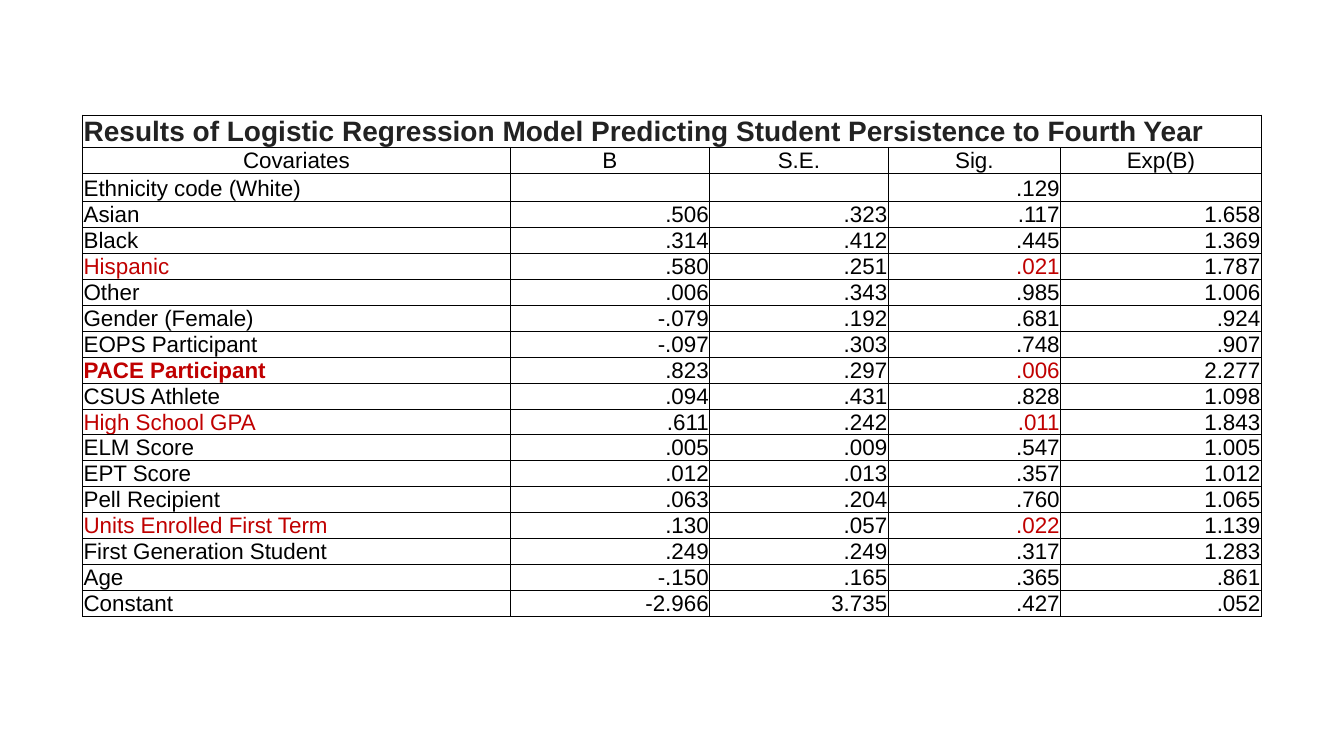
"""Build a slide with one table of logistic regression results."""
import lxml.etree
import pptx
import pptx.dml.color
import pptx.enum.text
import pptx.oxml.ns
import pptx.util

ALIGN = pptx.enum.text.PP_ALIGN
TITLE = "Results of Logistic Regression Model Predicting Student Persistence to Fourth Year"
HEADER = ["Covariates", "B", "S.E.", "Sig.", "Exp(B)"]
RESULTS = [
    ["Ethnicity code (White)", "", "", ".129", ""],
    ["Asian", ".506", ".323", ".117", "1.658"],
    ["Black", ".314", ".412", ".445", "1.369"],
    ["Hispanic", ".580", ".251", ".021", "1.787"],
    ["Other", ".006", ".343", ".985", "1.006"],
    ["Gender (Female)", "-.079", ".192", ".681", ".924"],
    ["EOPS Participant", "-.097", ".303", ".748", ".907"],
    ["PACE Participant", ".823", ".297", ".006", "2.277"],
    ["CSUS Athlete", ".094", ".431", ".828", "1.098"],
    ["High School GPA", ".611", ".242", ".011", "1.843"],
    ["ELM Score", ".005", ".009", ".547", "1.005"],
    ["EPT Score", ".012", ".013", ".357", "1.012"],
    ["Pell Recipient", ".063", ".204", ".760", "1.065"],
    ["Units Enrolled First Term", ".130", ".057", ".022", "1.139"],
    ["First Generation Student", ".249", ".249", ".317", "1.283"],
    ["Age", "-.150", ".165", ".365", ".861"],
    ["Constant", "-2.966", "3.735", ".427", ".052"],
]
COLUMN_SHARES = [31.81, 14.85, 13.28, 12.83, 14.93]
TITLE_ROW, BODY_ROW = 3.73, 3.2


def color(value):
    return pptx.dml.color.RGBColor.from_string(value)


def add_borders(cell):
    tcPr = cell._tc.get_or_add_tcPr()
    for side in ("lnL", "lnR", "lnT", "lnB"):
        ln = lxml.etree.SubElement(tcPr, pptx.oxml.ns.qn(f"a:{side}"), w="6350")
        fill = lxml.etree.SubElement(ln, pptx.oxml.ns.qn("a:solidFill"))
        lxml.etree.SubElement(fill, pptx.oxml.ns.qn("a:srgbClr"), val="000000")


prs = pptx.Presentation()
prs.slide_width, prs.slide_height = pptx.util.Inches(13.33), pptx.util.Inches(7.5)
W, H = prs.slide_width / 100, prs.slide_height / 100
s = prs.slides.add_slide(prs.slide_layouts[6])

rows = [[TITLE, "", "", "", ""], HEADER] + RESULTS
frame = s.shapes.add_table(len(rows), len(HEADER), int(6.15 * W), int(15.2 * H),
                           int(sum(COLUMN_SHARES) * W), int(70.67 * H))
table = frame.table
table.first_row = table.horz_banding = False
for column, share in zip(table.columns, COLUMN_SHARES):
    column.width = int(share * W)

margin = pptx.util.Inches(0.01)
cell_format = {"margin_left": margin, "margin_right": margin, "margin_top": margin,
               "margin_bottom": 0, "vertical_anchor": pptx.enum.text.MSO_ANCHOR.BOTTOM}

for i, values in enumerate(rows):
    table.rows[i].height = int((BODY_ROW if i else TITLE_ROW) * H)
    significant = i > 1 and float(values[3]) < 0.05
    for j, text in enumerate(values):
        cell = table.cell(i, j)
        for name, value in cell_format.items():
            setattr(cell, name, value)
        add_borders(cell)
        cell.fill.background()
        p = cell.text_frame.paragraphs[0]
        if i == 1:
            p.alignment = ALIGN.CENTER
        else:
            p.alignment = ALIGN.RIGHT if j else ALIGN.LEFT
        if not text:
            lxml.etree.SubElement(p._p, pptx.oxml.ns.qn("a:endParaRPr"), sz="1600")
            continue
        r = p.add_run()
        r.text = text
        red = significant and j in (0, 3)
        font_format = {"name": "Arial", "size": pptx.util.Pt(16 if i else 20),
                       "bold": i == 0 or text == "PACE Participant"}
        for name, value in font_format.items():
            setattr(r.font, name, value)
        r.font.color.rgb = color("C00000" if red else "000000" if i else "222222")

table.cell(0, 0).merge(table.cell(0, len(HEADER) - 1))
frame.height = int(70.67 * H)
prs.save("out.pptx")
